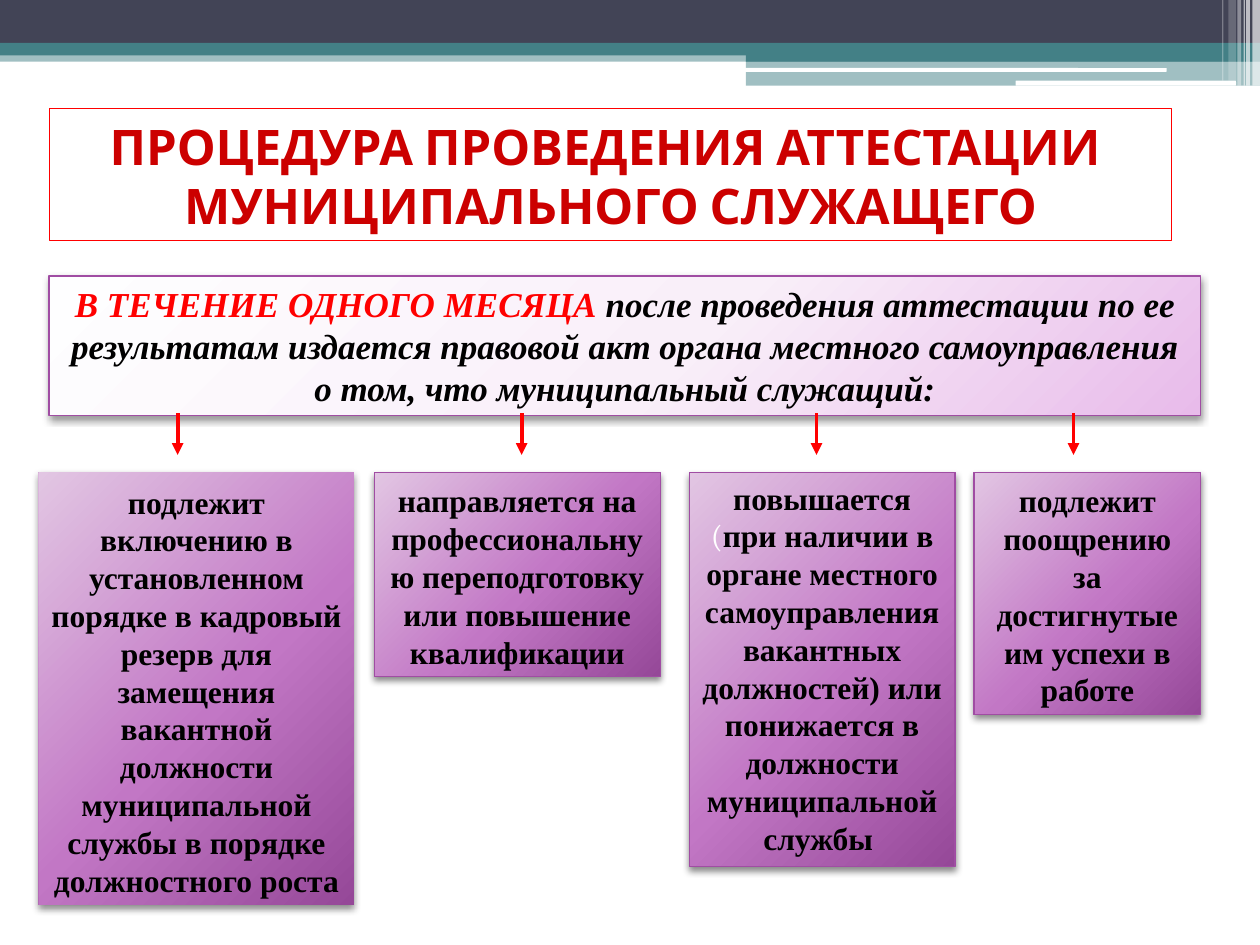
from typing import NamedTuple, Optional

from lxml.etree import SubElement
from pptx import Presentation
from pptx.dml.color import RGBColor
from pptx.enum.shapes import MSO_CONNECTOR as Connector, MSO_SHAPE as Shape
from pptx.enum.text import MSO_ANCHOR as Anchor, MSO_AUTO_SIZE as AutoSize, PP_ALIGN as Align
from pptx.oxml.ns import qn
from pptx.util import Inches, Pt

CELL = Inches(0.1)
COLUMNS, ROWS = 100, 75
BOX_TOP = 37.5
ARROW_TOP, ARROW_BOTTOM = 32.8, 36.1
ARROW_COLUMNS = (14.1, 41.4, 64.8, 85.2)
SERIF = "Times New Roman"
COLORS = {
    "slate": "424456", "teal": "438086", "white": "FFFFFF", "black": "000000",
    "red": "FF0000", "title": "CC0000", "border": "A04DA3",
}
PALE = ("FEFEFF", "F9EFF9", "E8BBEA")
PURPLE = ("E2C6E3", "C277C5", "954898")


class Area(NamedTuple):
    left: float
    top: float
    width: float
    height: float


class Bar(NamedTuple):
    area: Area
    color: str = "white"
    opacity: int = 100
    rounded: bool = False


class Span(NamedTuple):
    text: str
    color: str = "black"
    font: str = SERIF
    bold: bool = True
    italic: bool = False


class Card(NamedTuple):
    area: Area
    paras: list[list[Span]]
    stops: tuple[str, str, str] = PURPLE
    size: int = 18
    anchor: Anchor = Anchor.BOTTOM
    border: Optional[str] = "border"
    shadow_opacity: int = 45


BARS = [
    Bar(Area(0, 4, COLUMNS, 0.9), "teal", 50),
    Bar(Area(0, 0, COLUMNS, 3.4), "slate"),
    Bar(Area(0, 3.4, COLUMNS, 1), "teal"),
    Bar(Area(59.2, 3.9, 40.8, 1), "teal"),
    Bar(Area(59.2, 4.8, 40.8, 2), "teal", 50),
    Bar(Area(59.1, 5.4, 33.5, 0.3), rounded=True),
    Bar(Area(80.6, 6.4, 17.5, 0.4), rounded=True),
    Bar(Area(99.4, 0, 0.6, 6.8), opacity=65),
    Bar(Area(98.9, 0, 0.3, 6.8), opacity=65),
    Bar(Area(98.7, 0, 0.1, 6.8), opacity=60),
    Bar(Area(98.2, 0, 0.3, 6.8), opacity=40),
    Bar(Area(97.5, 0, 0.6, 6.4), opacity=20),
    Bar(Area(97, 0, 0.1, 6.4), opacity=30),
]

CARDS = [
    Card(Area(3.9, 21.9, 91.4, 11.1), [[
        Span("В ТЕЧЕНИЕ ОДНОГО МЕСЯЦА ", "red", italic=True),
        Span("после проведения аттестации по ее результатам издается правовой акт органа "
             "местного самоуправления о том, что муниципальный служащий:", italic=True),
    ]], PALE, 20, Anchor.TOP, shadow_opacity=40),
    Card(Area(3.1, BOX_TOP, 25, 34.3), [[
        Span("подлежит включению в установленном порядке в кадровый резерв для замещения "
             "вакантной должности муниципальной службы в порядке должностного роста"),
    ]], border=None),
    Card(Area(29.7, BOX_TOP, 22.7, 16.2), [
        [Span("направляется на профессиональную переподготовку ")],
        [Span("или повышение квалификации")],
    ]),
    Card(Area(54.7, BOX_TOP, 21.1, 31.3), [[
        Span("повышается"),
        Span(" (", "white", "Cambria", False),
        Span("при наличии в органе местного самоуправления вакантных должностей) или "
             "понижается в должности муниципальной службы "),
    ]], anchor=Anchor.TOP),
    Card(Area(77.3, BOX_TOP, 18, 19.2), [[
        Span("подлежит поощрению за достигнутые им успехи в работе"),
    ]]),
]


def rgb(name: str) -> RGBColor:
    """Return the named colour."""
    return RGBColor.from_string(COLORS[name])


def place(area: Area) -> list[int]:
    """Turn grid cells into slide lengths."""
    return [round(value * CELL) for value in area]


def add_node(parent, tag: str, **attributes):
    """Append a drawing element with the given attributes."""
    return SubElement(parent, qn(f"a:{tag}"), {key: str(value) for key, value in attributes.items()})


def draw_bar(page, bar: Bar) -> None:
    """Draw one plain strip of the header."""
    kind = Shape.ROUNDED_RECTANGLE if bar.rounded else Shape.RECTANGLE
    strip = page.shapes.add_shape(kind, *place(bar.area))
    strip.shadow.inherit = False
    strip.line.fill.background()
    strip.fill.solid()
    strip.fill.fore_color.rgb = rgb(bar.color)
    if bar.opacity < 100:
        color = strip._element.spPr.find(f".//{qn('a:srgbClr')}")
        add_node(color, "alpha", val=bar.opacity * 1000)


def fill_radial(box, stops: tuple[str, str, str]) -> None:
    """Fill a box with a radial gradient centred above its top left corner."""
    box.fill.gradient()
    gradient = box._element.spPr.find(qn("a:gradFill"))
    for child in list(gradient):
        gradient.remove(child)
    stop_list = add_node(gradient, "gsLst")
    for position, color in zip((0, 55, 100), stops):
        add_node(add_node(stop_list, "gs", pos=position * 1000), "srgbClr", val=color)
    add_node(add_node(gradient, "path", path="circle"), "fillToRect",
             l=-40000, t=-90000, r=140000, b=190000)


def cast_shadow(box, opacity: int) -> None:
    """Give a box a soft shadow straight below it."""
    box.shadow.inherit = False
    effects = box._element.spPr.find(qn("a:effectLst"))
    shadow = add_node(effects, "outerShdw", blurRad=Pt(4), dist=Pt(2), dir=5400000,
                      algn="t", rotWithShape=0)
    add_node(add_node(shadow, "srgbClr", val=COLORS["black"]), "alpha", val=opacity * 1000)


def draw_card(page, card: Card) -> None:
    """Draw a shaded box with centred text."""
    box = page.shapes.add_shape(Shape.RECTANGLE, *place(card.area))
    fill_radial(box, card.stops)
    if card.border:
        box.line.color.rgb = rgb(card.border)
        box.line.width = Pt(0.75)
    else:
        box.line.fill.background()
    cast_shadow(box, card.shadow_opacity)
    frame = box.text_frame
    frame.word_wrap = True
    frame.auto_size = AutoSize.SHAPE_TO_FIT_TEXT
    frame.vertical_anchor = card.anchor
    frame.text = "\n".join("" for _ in card.paras)
    for para, spans in zip(frame.paragraphs, card.paras):
        para.alignment = Align.CENTER
        for span in spans:
            run = para.add_run()
            run.text = span.text
            font = run.font
            font.name, font.size = span.font, Pt(card.size)
            font.bold, font.italic = span.bold, span.italic
            font.color.rgb = rgb(span.color)


def draw_arrow(page, column: float) -> None:
    """Draw a red arrow pointing down at the given column."""
    x, top, bottom = (round(value * CELL) for value in (column, ARROW_TOP, ARROW_BOTTOM))
    arrow = page.shapes.add_connector(Connector.STRAIGHT, x, top, x, bottom)
    arrow.line.color.rgb = rgb("red")
    arrow.line.width = Pt(2.25)
    add_node(arrow.line._get_or_add_ln(), "tailEnd", type="triangle")
    add_node(arrow._element.spPr, "effectLst")


def set_title(page) -> None:
    """Fill and format the title placeholder."""
    title = page.shapes.title
    title.left, title.top, title.width, title.height = place(Area(3.9, 8.6, 89.1, 10.5))
    title.line.color.rgb = rgb("red")
    title.line.width = Pt(0.75)
    frame = title.text_frame
    frame.vertical_anchor = Anchor.BOTTOM
    frame.auto_size = AutoSize.NONE
    frame.text = "ПРОЦЕДУРА ПРОВЕДЕНИЯ АТТЕСТАЦИИ \vМУНИЦИПАЛЬНОГО СЛУЖАЩЕГО"
    para = frame.paragraphs[0]
    para.alignment = Align.CENTER
    for run in para.runs:
        run.font.name, run.font.size, run.font.bold = "Cabin", Pt(28), True
        run.font.color.rgb = rgb("title")


def main() -> None:
    """Build the slide and save it."""
    deck = Presentation()
    deck.slide_width, deck.slide_height = COLUMNS * CELL, ROWS * CELL
    page = deck.slides.add_slide(deck.slide_layouts[5])
    for bar in BARS:
        draw_bar(page, bar)
    set_title(page)
    for card in CARDS:
        draw_card(page, card)
    for column in ARROW_COLUMNS:
        draw_arrow(page, column)
    deck.save("out.pptx")


if __name__ == "__main__":
    main()
